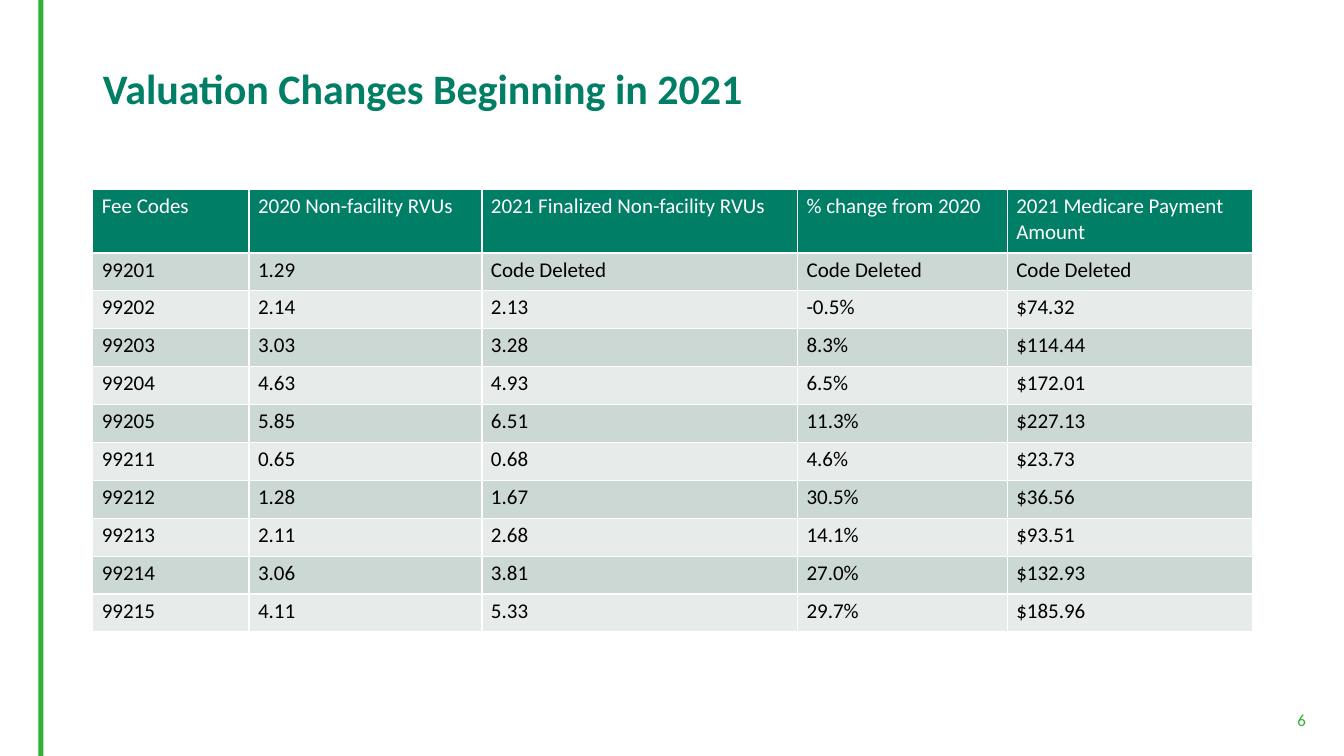
from lxml import etree
from pptx import Presentation
from pptx import util as u
from pptx.dml.color import RGBColor
from pptx.enum import shapes, text
from pptx.oxml.ns import qn

TITLE = "Valuation Changes Beginning in 2021"
PAGE_NUMBER = "6"
HEADERS = ["Fee Codes", "2020 Non-facility RVUs", "2021 Finalized Non-facility RVUs",
           "% change from 2020", "2021 Medicare Payment Amount"]
CODES = [
    ("99201", "1.29", "Code Deleted", "Code Deleted", "Code Deleted"),
    ("99202", "2.14", "2.13", "-0.5%", "$74.32"),
    ("99203", "3.03", "3.28", "8.3%", "$114.44"),
    ("99204", "4.63", "4.93", "6.5%", "$172.01"),
    ("99205", "5.85", "6.51", "11.3%", "$227.13"),
    ("99211", "0.65", "0.68", "4.6%", "$23.73"),
    ("99212", "1.28", "1.67", "30.5%", "$36.56"),
    ("99213", "2.11", "2.68", "14.1%", "$93.51"),
    ("99214", "3.06", "3.81", "27.0%", "$132.93"),
    ("99215", "4.11", "5.33", "29.7%", "$185.96"),
]

FONT = "Calibri"
GREEN = RGBColor(0x2E, 0xB1, 0x35)
TEAL = RGBColor(0x00, 0x7E, 0x66)
WHITE = RGBColor(0xFF, 0xFF, 0xFF)
BLACK = RGBColor(0x00, 0x00, 0x00)
BANDS = [RGBColor(0xCC, 0xD8, 0xD3), RGBColor(0xE7, 0xEC, 0xEA)]

SLIDE_WIDTH, SLIDE_HEIGHT = 13.33, 7.5
LEFT, CONTENT_WIDTH = 0.92, 11.5
TABLE_TOP = 1.88
COLUMN_WIDTHS = [1.55, 2.31, 3.13, 2.08, 2.43]
TABLE_HEIGHT, HEADER_HEIGHT = 4.39, 0.63
ROW_HEIGHT = (TABLE_HEIGHT - HEADER_HEIGHT) / len(CODES)
EDGES = ["lnL", "lnR", "lnT", "lnB"]


def inches(*lengths):
    return [u.Inches(length) for length in lengths]


def write(frame, words, size, color, bold=False, align=None):
    frame.word_wrap = True
    paragraph = frame.paragraphs[0]
    paragraph.alignment = align
    run = paragraph.add_run()
    run.text = words
    run.font.name = FONT
    run.font.size = u.Pt(size)
    run.font.bold = bold
    run.font.color.rgb = color
    return paragraph


def add_borders(cell):
    """Draw white cell edges; call before filling, as edges come first in the cell."""
    properties = cell._tc.get_or_add_tcPr()
    for edge in EDGES:
        line = etree.SubElement(properties, qn(f"a:{edge}"), w=str(u.Pt(1)))
        fill = etree.SubElement(line, qn("a:solidFill"))
        etree.SubElement(fill, qn("a:srgbClr"), val=str(WHITE))


def add_side_bar(slide):
    bar = slide.shapes.add_shape(shapes.MSO_SHAPE.RECTANGLE,
                                 *inches(0.38, 0, 0.05, SLIDE_HEIGHT))
    bar.shadow.inherit = False
    bar.fill.solid()
    bar.fill.fore_color.rgb = GREEN
    bar.line.fill.background()


def add_title(slide):
    title = slide.shapes.title
    title.left, title.top, title.width, title.height = inches(LEFT, 0.4, CONTENT_WIDTH, 1)
    title.text_frame.vertical_anchor = text.MSO_ANCHOR.MIDDLE
    paragraph = write(title.text_frame, TITLE, 30, TEAL, bold=True, align=text.PP_ALIGN.LEFT)
    paragraph.line_spacing = 0.9


def add_page_number(slide):
    frame = slide.shapes.add_textbox(*inches(9.57, 6.99, 3.48, 0.3)).text_frame
    frame.vertical_anchor = text.MSO_ANCHOR.BOTTOM
    paragraph = write(frame, PAGE_NUMBER, 12, GREEN, align=text.PP_ALIGN.RIGHT)
    paragraph.space_after = u.Pt(6)


def add_valuation_table(slide):
    rows = [HEADERS, *CODES]
    table = slide.shapes.add_table(len(rows), len(HEADERS),
                                   *inches(LEFT, TABLE_TOP, CONTENT_WIDTH, TABLE_HEIGHT)).table
    for column, width in zip(table.columns, COLUMN_WIDTHS):
        column.width = u.Inches(width)
    for index, values in enumerate(rows):
        is_header = index == 0
        table.rows[index].height = u.Inches(HEADER_HEIGHT if is_header else ROW_HEIGHT)
        for cell, value in zip(table.rows[index].cells, values):
            cell.margin_left = cell.margin_right = u.Inches(0.09)
            cell.margin_top = cell.margin_bottom = u.Inches(0.04)
            add_borders(cell)
            cell.fill.solid()
            cell.fill.fore_color.rgb = TEAL if is_header else BANDS[(index - 1) % 2]
            write(cell.text_frame, value, 15, WHITE if is_header else BLACK)


def main():
    presentation = Presentation()
    presentation.slide_width, presentation.slide_height = inches(SLIDE_WIDTH, SLIDE_HEIGHT)
    slide = presentation.slides.add_slide(presentation.slide_layouts.get_by_name("Title Only"))
    add_side_bar(slide)
    add_title(slide)
    add_page_number(slide)
    add_valuation_table(slide)
    presentation.save("out.pptx")


if __name__ == "__main__":
    main()
